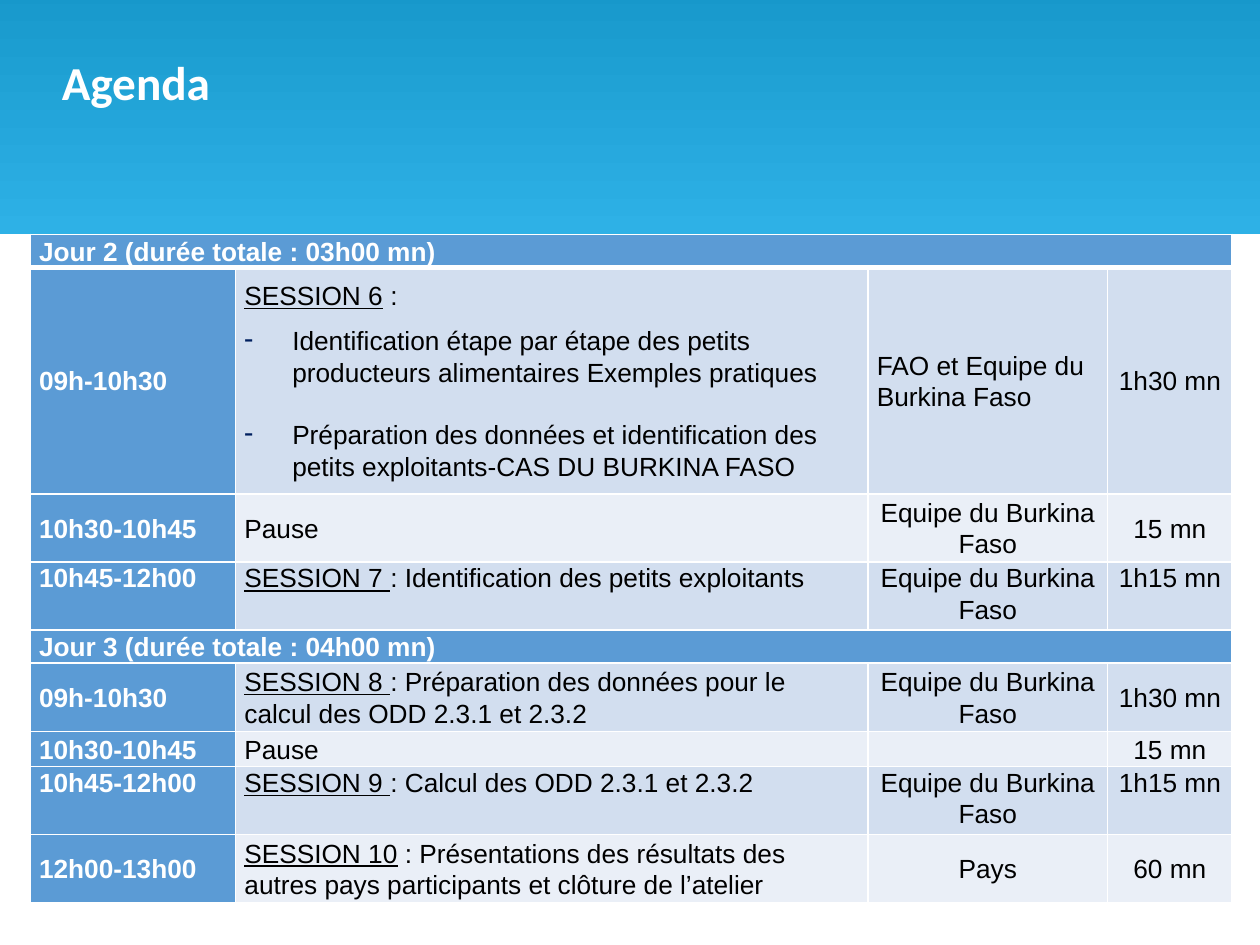
from dataclasses import dataclass

from lxml.etree import SubElement
from pptx import Presentation
from pptx.dml.color import RGBColor
from pptx.enum.shapes import MSO_SHAPE
from pptx.enum.text import MSO_ANCHOR, PP_ALIGN
from pptx.oxml.ns import qn
from pptx.util import Inches, Pt

PAGE_WIDTH, PAGE_HEIGHT = Inches(10), Inches(7.5)
COLORS = {
    "band_top": "1798CB", "band_bottom": "2EB1E6", "header": "5B9BD5",
    "tint": "D2DEEF", "pale": "EAEFF7", "white": "FFFFFF",
    "black": "000000", "dash": "001F5F",
}
# Shares of the page width and height
COLUMNS = (0.163, 0.502, 0.19, 0.099)
SHORT, DOUBLE, TALL = 0.035, 0.072, 0.24
TEAM = "Equipe du Burkina Faso"


@dataclass(frozen=True)
class Day:
    title: str
    height: float = SHORT


@dataclass(frozen=True)
class Slot:
    time: str
    session: str
    topic: str
    host: str
    length: str
    height: float = DOUBLE
    tone: str = "tint"
    anchor: MSO_ANCHOR = MSO_ANCHOR.MIDDLE
    host_align: PP_ALIGN = PP_ALIGN.CENTER
    points: tuple[str, ...] = ()


AGENDA = (
    Day("Jour 2 (durée totale : 03h00 mn)"),
    Slot("09h-10h30", "SESSION 6", " :", "FAO et Equipe du Burkina Faso", "1h30 mn",
         height=TALL, host_align=PP_ALIGN.LEFT, points=(
             "Identification étape par étape des petits producteurs alimentaires Exemples pratiques",
             "Préparation des données et identification des petits exploitants-CAS DU BURKINA FASO")),
    Slot("10h30-10h45", "", "Pause", TEAM, "15 mn", tone="pale"),
    Slot("10h45-12h00", "SESSION 7 ", ": Identification des petits exploitants", TEAM, "1h15 mn",
         anchor=MSO_ANCHOR.TOP),
    Day("Jour 3 (durée totale : 04h00 mn)"),
    Slot("09h-10h30", "SESSION 8 ",
         ": Préparation des données pour le calcul des ODD 2.3.1 et 2.3.2", TEAM, "1h30 mn"),
    Slot("10h30-10h45", "", "Pause", "", "15 mn", height=SHORT, tone="pale"),
    Slot("10h45-12h00", "SESSION 9 ", ": Calcul des ODD 2.3.1 et 2.3.2", TEAM, "1h15 mn",
         anchor=MSO_ANCHOR.TOP),
    Slot("12h00-13h00", "SESSION 10",
         " : Présentations des résultats des autres pays participants et clôture de l’atelier",
         "Pays", "60 mn", tone="pale"),
)


def color(name: str) -> RGBColor:
    return RGBColor.from_string(COLORS[name])


def across(share: float) -> int:
    return round(PAGE_WIDTH * share)


def down(share: float) -> int:
    return round(PAGE_HEIGHT * share)


def set_borders(cell, bottom: float = 1) -> None:
    properties = cell._tc.get_or_add_tcPr()
    for side, width in (("lnL", 1), ("lnR", 1), ("lnT", 1), ("lnB", bottom)):
        line = SubElement(properties, qn(f"a:{side}"), w=str(Pt(width)))
        SubElement(SubElement(line, qn("a:solidFill")), qn("a:srgbClr"), val=COLORS["white"])


def style_cell(cell, fill: str, anchor: MSO_ANCHOR) -> None:
    cell.fill.solid()
    cell.fill.fore_color.rgb = color(fill)
    cell.vertical_anchor = anchor
    cell.margin_left = cell.margin_right = Inches(0.07)
    cell.margin_top = cell.margin_bottom = 0


def style_paragraph(para, ink: str, bold: bool, align: PP_ALIGN, after: float = 8) -> None:
    para.alignment = align
    para.line_spacing = 1.07
    para.space_after = Pt(after)
    para.font.name, para.font.size = "Arial", Pt(15)
    para.font.bold = bold
    para.font.color.rgb = color(ink)


def write_cell(cell, text: str, fill: str, anchor: MSO_ANCHOR = MSO_ANCHOR.MIDDLE,
               align: PP_ALIGN = PP_ALIGN.LEFT, underlined: str = "") -> None:
    style_cell(cell, fill, anchor)
    heading = fill == "header"
    para = cell.text_frame.paragraphs[0]
    style_paragraph(para, "white" if heading else "black", heading, align)
    if underlined:
        span = para.add_run()
        span.text = underlined
        span.font.underline = True
    span = para.add_run()
    span.text = text
    span.font.size = Pt(15)


def add_point(cell, text: str, last: bool) -> None:
    para = cell.text_frame.add_paragraph()
    properties = para._p.get_or_add_pPr()
    properties.set("marL", str(Inches(0.38)))
    properties.set("indent", str(-Inches(0.38)))
    SubElement(SubElement(properties, qn("a:buClr")), qn("a:srgbClr"), val=COLORS["dash"])
    SubElement(properties, qn("a:buChar"), char="-")
    style_paragraph(para, "black", False, PP_ALIGN.LEFT, after=8 if last else 18)
    para.add_run().text = text


def write_slot(cells: list, slot: Slot) -> None:
    time, topic, host, length = cells
    write_cell(time, slot.time, "header", slot.anchor)
    write_cell(topic, slot.topic, slot.tone, slot.anchor, underlined=slot.session)
    write_cell(host, slot.host, slot.tone, slot.anchor, slot.host_align)
    write_cell(length, slot.length, slot.tone, slot.anchor, PP_ALIGN.CENTER)
    for point in slot.points:
        add_point(topic, point, last=point == slot.points[-1])


def add_header(page) -> None:
    # Gradient band behind the title
    band = page.shapes.add_shape(MSO_SHAPE.RECTANGLE, 0, down(-0.015), PAGE_WIDTH, down(0.263))
    band.shadow.inherit = False
    band.line.fill.background()
    band.fill.gradient()
    band.fill.gradient_angle = 270
    for stop, name in zip(band.fill.gradient_stops, ("band_top", "band_bottom")):
        stop.color.rgb = color(name)

    # Title
    title = page.shapes.title
    band._element.addnext(title._element)
    title.left, title.top = across(0.039), down(0.056)
    title.width, title.height = across(0.961), down(0.12)
    title.text_frame.text = "Agenda"
    title.text_frame.vertical_anchor = MSO_ANCHOR.TOP
    para = title.text_frame.paragraphs[0]
    para.alignment = PP_ALIGN.LEFT
    para.line_spacing = 0.9
    para.font.name, para.font.size, para.font.bold = "Calibri", Pt(27), True
    para.font.color.rgb = color("white")


def add_agenda(page) -> None:
    table = page.shapes.add_table(
        len(AGENDA), len(COLUMNS), across(0.024), down(0.248),
        across(sum(COLUMNS)), down(sum(entry.height for entry in AGENDA))).table
    table.horz_banding = False
    for column, share in zip(table.columns, COLUMNS):
        column.width = across(share)
    for index, (row, entry) in enumerate(zip(table.rows, AGENDA)):
        row.height = down(entry.height)
        cells = list(row.cells)
        for cell in cells:
            set_borders(cell, bottom=3 if index == 0 else 1)
        if isinstance(entry, Day):
            cells[0].merge(cells[-1])
            write_cell(cells[0], entry.title, "header")
        else:
            write_slot(cells, entry)


def main() -> None:
    deck = Presentation()
    deck.slide_width, deck.slide_height = PAGE_WIDTH, PAGE_HEIGHT
    page = deck.slides.add_slide(deck.slide_layouts.get_by_name("Title Only"))
    add_header(page)
    add_agenda(page)
    deck.save("out.pptx")


if __name__ == "__main__":
    main()
